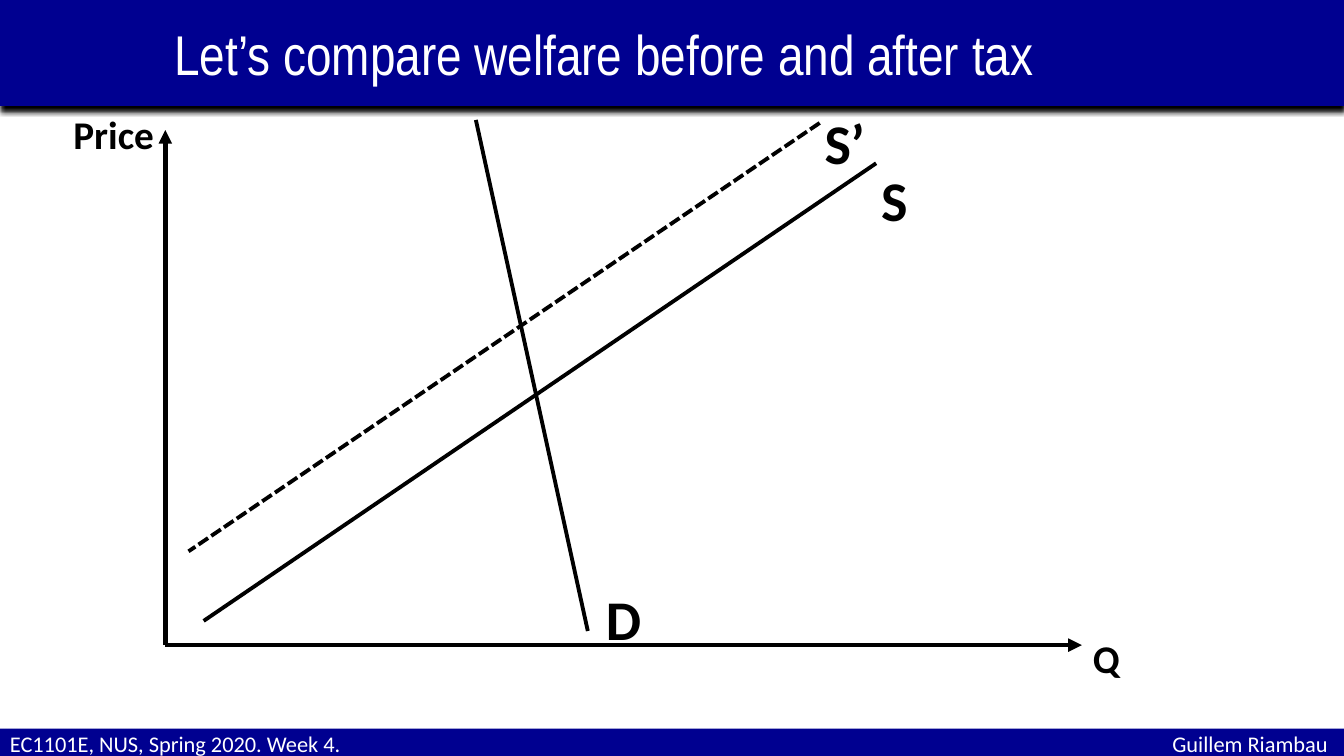
from lxml import etree
from pptx import Presentation
from pptx.dml.color import RGBColor
from pptx.enum.dml import MSO_LINE
from pptx.enum.shapes import MSO_CONNECTOR, MSO_SHAPE
from pptx.enum.text import MSO_ANCHOR, MSO_AUTO_SIZE, PP_ALIGN
from pptx.oxml.ns import qn
from pptx.util import Inches, Pt

STRAIGHT = MSO_CONNECTOR.STRAIGHT
DASHED = MSO_LINE.SQUARE_DOT
NAVY, BLACK, WHITE = "000090", "000000", "FFFFFF"
SLIDE_WIDTH, SLIDE_HEIGHT = 13.33, 7.5

TITLE = "Let’s compare welfare before and after tax"
COURSE, LECTURER = "EC1101E, NUS, Spring 2020. Week 4.", "Guillem Riambau"
TITLE_BAR = (0, 0, SLIDE_WIDTH, 1.05)
FOOTER_BAR = (0, 7.23, SLIDE_WIDTH, 0.3)

ORIGIN = (1.64, 6.4)
AXIS_ENDS = [(1.64, 1.29), (10.73, 6.4)]
# start, end, dash style
CURVES = {
    "demand": ((5.83, 6.26), (4.72, 1.19), None),
    "supply": ((2.02, 6.16), (8.69, 1.62), None),
    "supply with tax": ((8.13, 1.22), (1.87, 5.47), DASHED),
}
# text, left, top, height, font size
LABELS = [
    ("Price", 0.63, 1.05, 0.57, 28),
    ("Q", 10.74, 6.24, 0.57, 28),
    ("D", 5.91, 5.75, 0.77, 40),
    ("S", 8.64, 1.59, 0.77, 40),
    ("S’", 8.08, 1.03, 0.77, 40),
]
LABEL_WIDTH = 1.52


def color(value):
    return RGBColor.from_string(value)


def place(shape, box):
    shape.left, shape.top, shape.width, shape.height = map(Inches, box)


def write(shape, text, size, font="Calibri", fill=BLACK, bold=False,
          anchor=MSO_ANCHOR.TOP, left_margin=0.1, wrap=True):
    frame = shape.text_frame
    frame.word_wrap = wrap
    frame.auto_size = MSO_AUTO_SIZE.NONE
    frame.vertical_anchor = anchor
    frame.margin_left = Inches(left_margin)
    paragraph = frame.paragraphs[0]
    paragraph.alignment = PP_ALIGN.LEFT
    run = paragraph.add_run()
    run.text = text
    run.font.name, run.font.size, run.font.bold = font, Pt(size), bold
    run.font.color.rgb = color(fill)
    return paragraph


def style_bar(shape):
    """Navy fill, no outline and a soft shadow straight below."""
    shape.fill.solid()
    shape.fill.fore_color.rgb = color(NAVY)
    shape.line.fill.background()
    shape.shadow.inherit = False
    effects = shape._element.spPr.find(qn("a:effectLst"))
    shadow = etree.SubElement(effects, qn("a:outerShdw"), blurRad=str(Pt(4)),
                              dist=str(Pt(4)), dir="5400000", rotWithShape="0")
    etree.SubElement(shadow, qn("a:srgbClr"), val=BLACK)


def add_line(slide, start, end, width, dash=None, arrow=False):
    points = [Inches(value) for value in (*start, *end)]
    connector = slide.shapes.add_connector(STRAIGHT, *points)
    connector.line.width = Pt(width)
    connector.line.color.rgb = color(BLACK)
    if dash:
        connector.line.dash_style = dash
    properties = connector._element.spPr
    if arrow:
        etree.SubElement(properties.find(qn("a:ln")), qn("a:tailEnd"), type="triangle")
    etree.SubElement(properties, qn("a:effectLst"))


def add_title(slide):
    title = slide.shapes.title
    place(title, TITLE_BAR)
    style_bar(title)
    write(title, TITLE, 40, font="Arial Narrow", fill=WHITE,
          anchor=MSO_ANCHOR.MIDDLE, left_margin=1.73)


def add_footer(slide):
    footer = slide.shapes.add_shape(MSO_SHAPE.RECTANGLE, *map(Inches, FOOTER_BAR))
    style_bar(footer)
    paragraph = write(footer, f"{COURSE}\t{LECTURER}", 16, fill=WHITE,
                      anchor=MSO_ANCHOR.MIDDLE)
    tabs = etree.SubElement(paragraph._p.get_or_add_pPr(), qn("a:tabLst"))
    etree.SubElement(tabs, qn("a:tab"), pos=str(Inches(13.07)), algn="r")


def add_diagram(slide):
    for end in AXIS_ENDS:
        add_line(slide, ORIGIN, end, 3.25, arrow=True)
    for start, end, dash in CURVES.values():
        add_line(slide, start, end, 2.75, dash=dash)
    for text, left, top, height, size in LABELS:
        box = map(Inches, (left, top, LABEL_WIDTH, height))
        write(slide.shapes.add_textbox(*box), text, size, bold=True)


def main():
    presentation = Presentation()
    presentation.slide_width = Inches(SLIDE_WIDTH)
    presentation.slide_height = Inches(SLIDE_HEIGHT)
    slide = presentation.slides.add_slide(presentation.slide_layouts[5])
    add_title(slide)
    add_footer(slide)
    add_diagram(slide)
    presentation.save("out.pptx")


if __name__ == "__main__":
    main()
